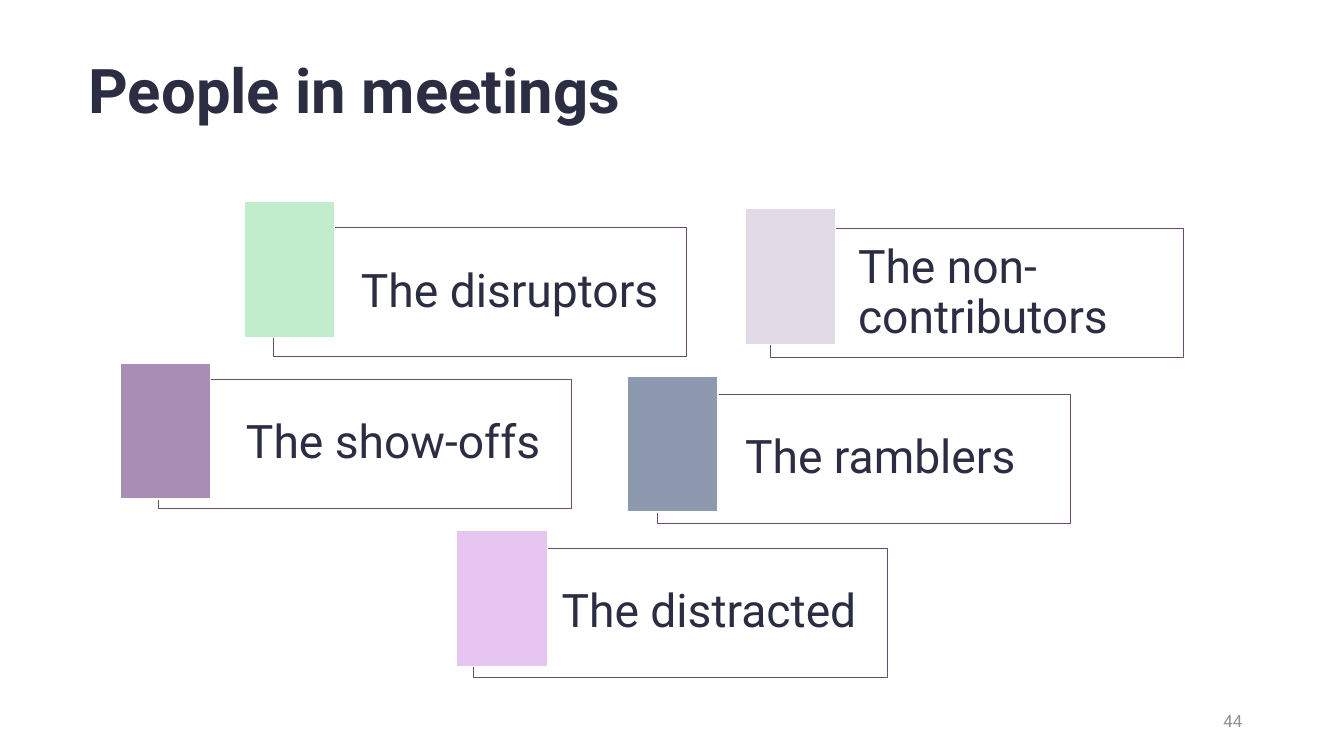
from dataclasses import dataclass

from lxml import etree
from pptx import Presentation
from pptx import util as u
from pptx.dml.color import RGBColor
from pptx.enum import shapes, text
from pptx.oxml.ns import qn


@dataclass(frozen=True)
class Theme:
    """Colours, font and type sizes of the slide."""
    font: str = "Roboto"
    ink: str = "2B2D42"
    muted: str = "8F8F93"
    outline: str = "694D75"
    paper: str = "FFFFFF"
    title_size: int = 44
    card_size: int = 33
    number_size: int = 12


class SlideBuilder:
    """Draws styled elements on the current slide."""

    def __init__(self, slide, theme):
        """Keep the slide and its style."""
        self.s = slide
        self.theme = theme

    def set_text(self, tf, words, size, color, margins=None, align=text.PP_ALIGN.LEFT,
                 bold=False, spacing=1.0):
        """Fill a text frame with one styled paragraph."""
        frame = {"word_wrap": True, "vertical_anchor": text.MSO_ANCHOR.MIDDLE}
        for side, inches in (margins or {}).items():
            frame[f"margin_{side}"] = u.Inches(inches)
        p = tf.paragraphs[0]
        r = p.add_run()
        r.text = words
        formats = (
            (tf, frame),
            (p, {"alignment": align, "line_spacing": spacing}),
            (r.font, {"name": self.theme.font, "size": u.Pt(size), "bold": bold}),
        )
        for target, values in formats:
            for name, value in values.items():
                setattr(target, name, value)
        r.font.color.rgb = RGBColor.from_string(color)

    def label(self, box, words, size, color, **style):
        """Add a text box."""
        sp = self.s.shapes.add_textbox(*map(u.Inches, box))
        self.set_text(sp.text_frame, words, size, color, **style)

    def rect(self, box, fill, line, width, opacity=None):
        """Add a rectangle, partly transparent when opacity is given."""
        sp = self.s.shapes.add_shape(shapes.MSO_SHAPE.RECTANGLE, *map(u.Inches, box))
        sp.shadow.inherit = False
        sp.fill.solid()
        sp.fill.fore_color.rgb = RGBColor.from_string(fill)
        sp.line.color.rgb = RGBColor.from_string(line)
        sp.line.width = u.Pt(width)
        if opacity is not None:
            color = sp.element.spPr.find(qn("a:solidFill"))[0]
            etree.SubElement(color, qn("a:alpha")).set("val", str(opacity * 1000))
        return sp

    def card(self, words, card_at, swatch_at, color):
        """Add an outlined card with a coloured swatch over its left end."""
        t = self.theme
        sp = self.rect((*card_at, 4.1, 1.28), t.paper, t.outline, 0.5, opacity=40)
        margins = {"left": 0.87, "top": 0.14, "right": 0.14, "bottom": 0.14}
        self.set_text(sp.text_frame, words, t.card_size, t.ink, margins=margins, spacing=0.9)
        self.rect((*swatch_at, 0.9, 1.35), color, t.paper, 1)


CARDS = (
    ("The disruptors", (2.71, 2.26), (2.42, 2), "C1EDCC"),
    ("The non-contributors", (7.64, 2.27), (7.39, 2.07), "E2D9E6"),
    ("The show-offs", (1.57, 3.76), (1.19, 3.6), "A88DB4"),
    ("The ramblers", (6.52, 3.91), (6.22, 3.73), "8D99AE"),
    ("The distracted", (4.7, 5.44), (4.53, 5.26), "E7C5F1"),
)


def main():
    """Build the slide and save it."""
    prs = Presentation()
    prs.slide_width, prs.slide_height = u.Inches(13.33), u.Inches(7.5)
    theme = Theme()
    builder = SlideBuilder(prs.slides.add_slide(prs.slide_layouts[6]), theme)
    builder.label((0.78, 0.2, 12.04, 1.45), "People in meetings", theme.title_size,
                  theme.ink, bold=True, spacing=0.9)
    for card in CARDS:
        builder.card(*card)
    builder.label((9.42, 6.95, 3, 0.4), "44", theme.number_size, theme.muted,
                  align=text.PP_ALIGN.RIGHT)
    prs.save("out.pptx")


if __name__ == "__main__":
    main()
